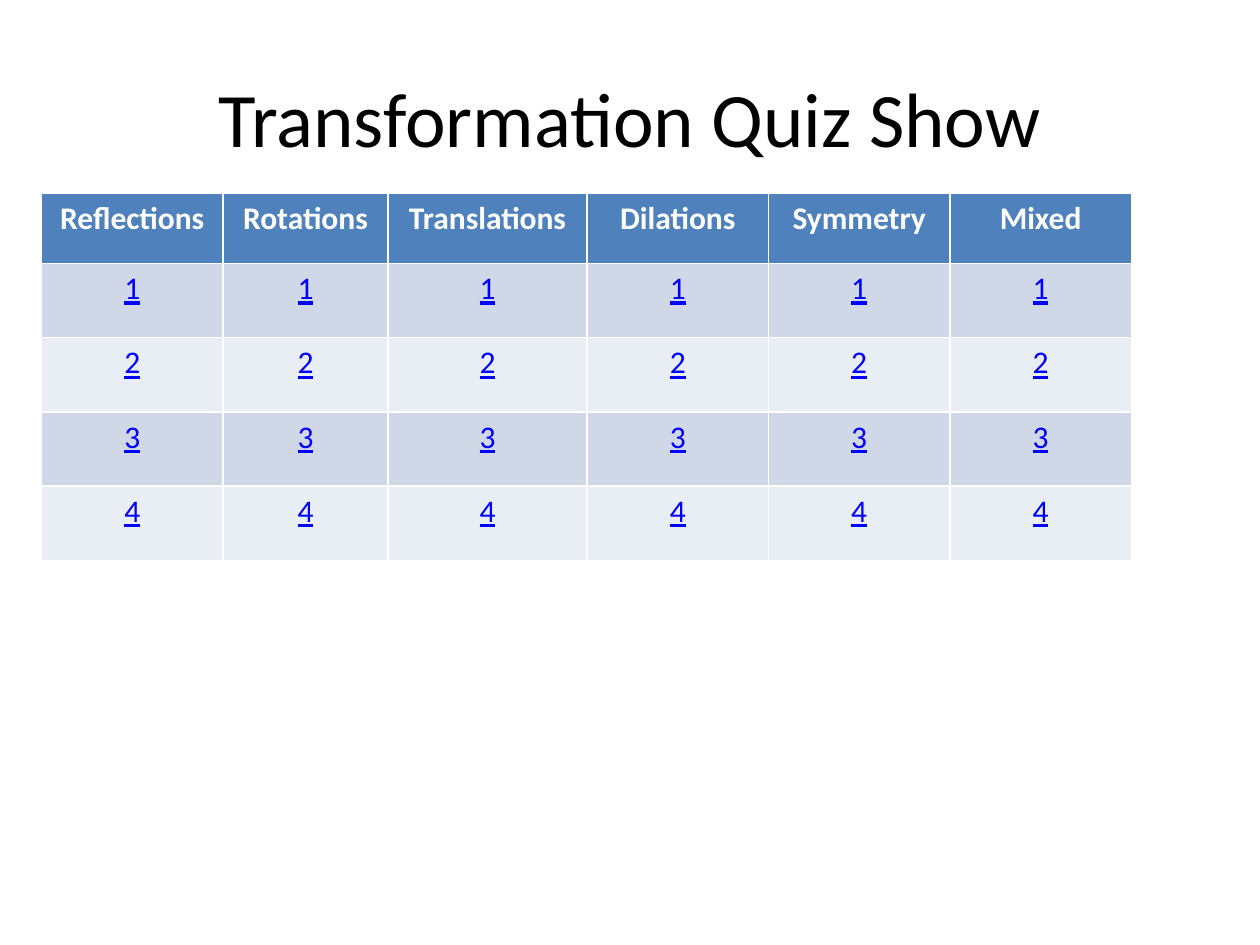
"""Build a quiz board slide with six topics and four numbered questions each."""
from pptx import Presentation, util as u
from pptx.dml.color import RGBColor
from pptx.enum import text

TITLE = "Transformation Quiz Show"
TOPIC_WIDTHS = {
    "Reflections": 1.44,
    "Rotations": 1.31,
    "Translations": 1.58,
    "Dilations": 1.44,
    "Symmetry": 1.44,
    "Mixed": 1.44,
}
QUESTIONS = ["1", "2", "3", "4"]
COLORS = {
    "title": "000000",
    "header": "4F81BD",
    "header_text": "FFFFFF",
    "question": "0000FF",
    "odd": "D0D8E8",
    "even": "E9EDF4",
}
SLIDE_W, SLIDE_H = 10, 7.5
MARGIN = SLIDE_W * 0.05
BOARD_LEFT, BOARD_TOP = 0.33, 1.53
HEADER_H, QUESTION_H = 0.56, 0.59


def write(frame, words, size=18, color="title", bold=False, underline=False):
    paragraph = frame.paragraphs[0]
    paragraph.alignment = text.PP_ALIGN.CENTER
    run = paragraph.add_run()
    run.text = words
    run.font.name = "Calibri"
    run.font.size = u.Pt(size)
    run.font.bold = bold
    run.font.underline = underline
    run.font.color.rgb = RGBColor.from_string(COLORS[color])


def add_heading(slide):
    heading = slide.shapes.add_textbox(
        u.Inches(MARGIN), u.Inches(SLIDE_H * 0.04),
        u.Inches(SLIDE_W - 2 * MARGIN), u.Inches(SLIDE_H / 6)).text_frame
    heading.word_wrap = True
    heading.vertical_anchor = text.MSO_ANCHOR.MIDDLE
    write(heading, TITLE, size=44)


def add_board(slide):
    widths = list(TOPIC_WIDTHS.values())
    heights = [HEADER_H] + [QUESTION_H] * len(QUESTIONS)
    board = slide.shapes.add_table(
        len(heights), len(widths), u.Inches(BOARD_LEFT), u.Inches(BOARD_TOP),
        u.Inches(sum(widths)), u.Inches(sum(heights))).table
    for column, width in zip(board.columns, widths):
        column.width = u.Inches(width)
    for row, height in zip(board.rows, heights):
        row.height = u.Inches(height)

    rows = [list(TOPIC_WIDTHS)] + [[q] * len(widths) for q in QUESTIONS]
    for r, labels in enumerate(rows):
        is_header = r == 0
        band = "header" if is_header else "odd" if r % 2 else "even"
        for c, label in enumerate(labels):
            cell = board.cell(r, c)
            cell.fill.solid()
            cell.fill.fore_color.rgb = RGBColor.from_string(COLORS[band])
            write(cell.text_frame, label, bold=is_header, underline=not is_header,
                  color="header_text" if is_header else "question")


def main():
    deck = Presentation()
    deck.slide_width, deck.slide_height = u.Inches(SLIDE_W), u.Inches(SLIDE_H)
    slide = deck.slides.add_slide(deck.slide_layouts[6])
    add_heading(slide)
    add_board(slide)
    deck.save("out.pptx")


if __name__ == "__main__":
    main()
